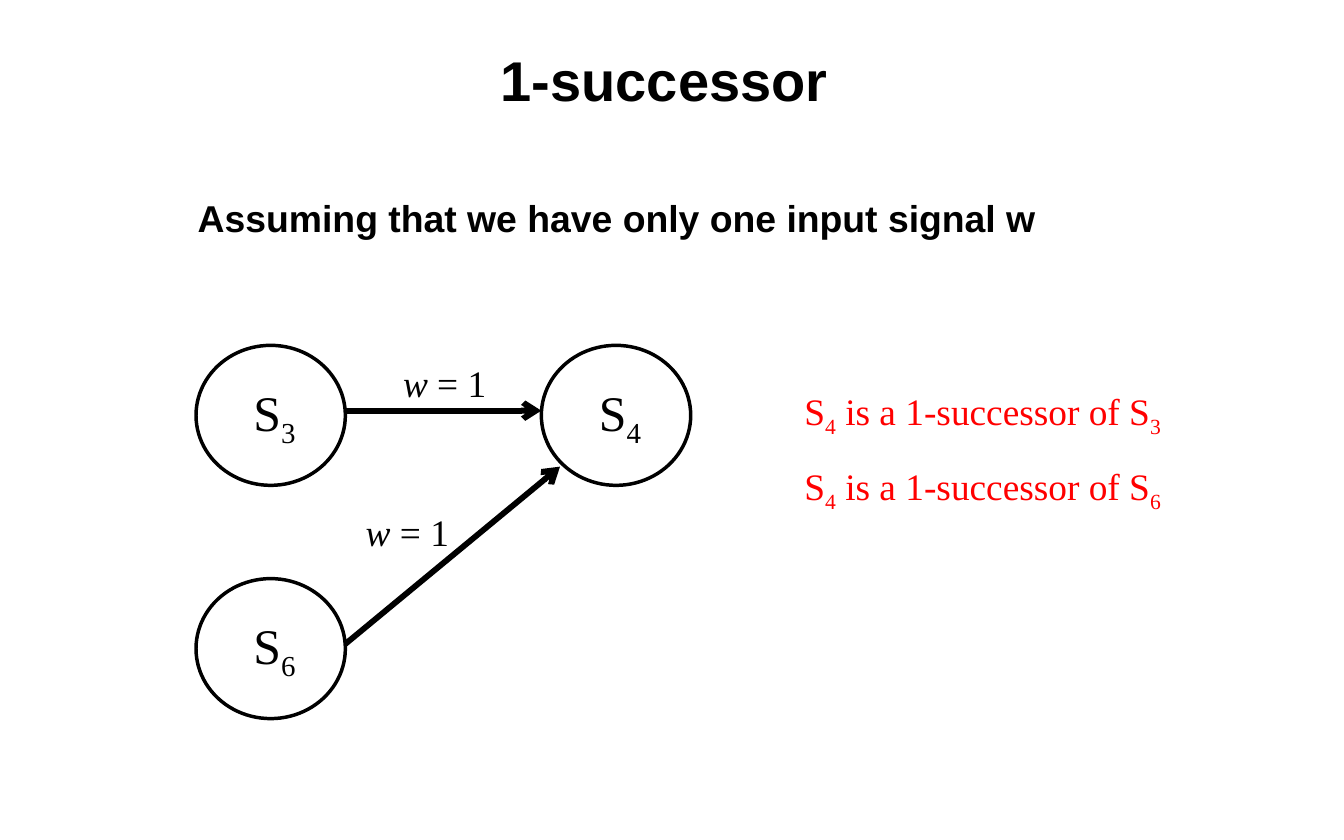
from pptx import Presentation
from pptx import util as u
from pptx.dml.color import RGBColor
from pptx.enum import shapes, text
from pptx.oxml.ns import qn
from lxml import etree

COLORS = {"ink": "000000", "paper": "FFFFFF", "remark": "FF0000"}
SANS, SERIF = "Arial", "Times New Roman"
STATE_SIZE = (96, 90)

title = "1-successor "
assumption = "Assuming that we have only one input signal w"
states = [("3", 126, 222), ("4", 348, 222), ("6", 126, 372)]
transitions = [
    ((222, 264), (348, 264), (252, 228)),
    ((222, 414), (360, 300), (228, 324)),
]
remarks = [("4", "3"), ("4", "6")]
REMARK_LEFT, REMARK_TOP, REMARK_STEP = 510, 246, 48


def rgb(name):
    return RGBColor.from_string(COLORS[name])


def write(frame, runs, size=24, font=SERIF, color="ink", bold=False,
          align=text.PP_ALIGN.LEFT, anchor=text.MSO_ANCHOR.TOP, wrap=False):
    frame.word_wrap = wrap
    frame.vertical_anchor = anchor
    paragraph = frame.paragraphs[0]
    paragraph.alignment = align
    for words, style in runs:
        run = paragraph.add_run()
        run.text = words
        run.font.size = u.Pt(size)
        run.font.name = font
        run.font.bold = bold
        run.font.italic = style == "italic"
        run.font.color.rgb = rgb(color)
        if style == "sub":
            run._r.get_or_add_rPr().set("baseline", "-25000")


def add_text(slide, box, runs, **style):
    frame = slide.shapes.add_textbox(*map(u.Pt, box)).text_frame
    write(frame, runs, **style)
    return frame


def add_state(slide, number, left, top):
    state = slide.shapes.add_shape(
        shapes.MSO_SHAPE.OVAL, *map(u.Pt, (left, top, *STATE_SIZE)))
    state.shadow.inherit = False
    state.fill.solid()
    state.fill.fore_color.rgb = rgb("paper")
    state.line.color.rgb = rgb("ink")
    state.line.width = u.Pt(2.25)
    frame = state.text_frame
    frame.margin_left, frame.margin_right = u.Pt(5), u.Pt(0)
    frame.margin_top = frame.margin_bottom = u.Pt(0)
    write(frame, [("S", None), (number, "sub")], size=32, wrap=True,
          align=text.PP_ALIGN.CENTER, anchor=text.MSO_ANCHOR.MIDDLE)


def add_transition(slide, start, end):
    arrow = slide.shapes.add_connector(
        shapes.MSO_CONNECTOR.STRAIGHT, *map(u.Pt, (*start, *end)))
    arrow.line.color.rgb = rgb("ink")
    arrow.line.width = u.Pt(3.75)
    etree.SubElement(arrow.line._get_or_add_ln(), qn("a:tailEnd"), type="arrow")
    etree.SubElement(arrow._element.spPr, qn("a:effectLst"))


def main():
    deck = Presentation()
    deck.slide_width, deck.slide_height = u.Pt(864), u.Pt(540)
    slide = deck.slides.add_slide(deck.slide_layouts[6])

    add_text(slide, (0, 24, 864, 54), [(title, None)], size=36, font=SANS,
             bold=True, wrap=True, align=text.PP_ALIGN.CENTER,
             anchor=text.MSO_ANCHOR.MIDDLE)
    add_text(slide, (120, 122, 624, 48), [(assumption, None)], font=SANS,
             bold=True, wrap=True)

    for state in states:
        add_state(slide, *state)
    for start, end, label in transitions:
        add_transition(slide, start, end)
        add_text(slide, (*label, 70.5, 36.5), [("w", "italic"), (" = 1", None)])

    for row, (successor, origin) in enumerate(remarks):
        add_text(slide, (REMARK_LEFT, REMARK_TOP + row * REMARK_STEP, 248.5, 36.5),
                 [("S", None), (successor, "sub"),
                  (" is a 1-successor of S", None), (origin, "sub")],
                 color="remark")

    deck.save("out.pptx")


if __name__ == "__main__":
    main()
